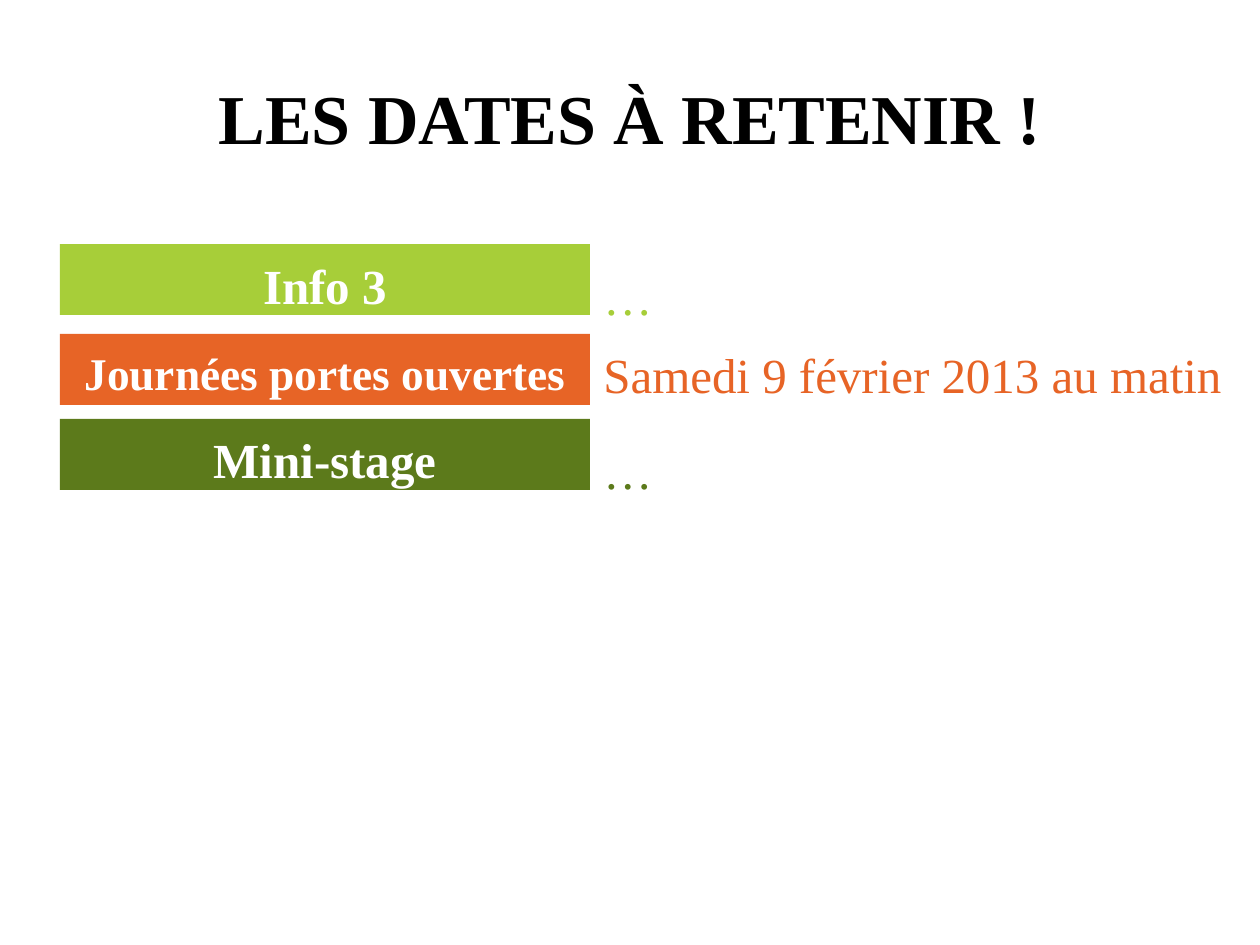
from pptx import Presentation
from pptx.dml.color import RGBColor
from pptx.enum.shapes import MSO_SHAPE
from pptx.enum.text import MSO_ANCHOR, PP_ALIGN
from pptx.util import Emu, Pt

PX = 914400 // 126
COLORS = {
    "white": "FFFFFF",
    "black": "000000",
    "lime": "A7CE39",
    "orange": "E76426",
    "green": "5C7A1B",
}


def place(left, top, width, height):
    return [Emu(value * PX) for value in (left, top, width, height)]


def write(box, text, size, color, bold, align, anchor):
    frame = box.text_frame
    frame.word_wrap = True
    frame.vertical_anchor = anchor
    paragraph = frame.paragraphs[0]
    paragraph.text = text
    paragraph.alignment = align
    paragraph.font.name = "Times New Roman"
    paragraph.font.size = Pt(size)
    paragraph.font.bold = bold
    paragraph.font.color.rgb = RGBColor.from_string(COLORS[color])
    return frame


deck = Presentation()
deck.slide_width, deck.slide_height = Emu(1260 * PX), Emu(945 * PX)
page = deck.slides.add_slide(deck.slide_layouts[5])

title = page.shapes.title
title.left, title.top, title.width, title.height = place(63, 38, 1134, 157)
write(title, "LES DATES À RETENIR !", 40, "black", True, PP_ALIGN.CENTER, MSO_ANCHOR.MIDDLE)

events = [
    ("Info 3", 28, "…", "lime", 244, 256),
    ("Journées portes ouvertes", 25.9, "Samedi 9 février 2013 au matin", "orange", 334, 334),
    ("Mini-stage", 28, "…", "green", 419, 430),
]
for name, size, date, color, label_top, date_top in events:
    label = page.shapes.add_shape(MSO_SHAPE.RECTANGLE, *place(60, label_top, 530, 71))
    label.shadow.inherit = False
    label.fill.solid()
    label.fill.fore_color.rgb = RGBColor.from_string(COLORS[color])
    label.line.fill.background()
    label_frame = write(label, name, size, "white", True, PP_ALIGN.CENTER, MSO_ANCHOR.TOP)

    date_box = page.shapes.add_textbox(*place(591, date_top, 645, 49))
    date_frame = write(date_box, date, 28, color, False, PP_ALIGN.LEFT, MSO_ANCHOR.TOP)
    date_frame.margin_right = 0

    for frame in (label_frame, date_frame):
        frame.margin_top = Emu(11 * PX)
        frame.margin_bottom = 0

deck.save("out.pptx")
